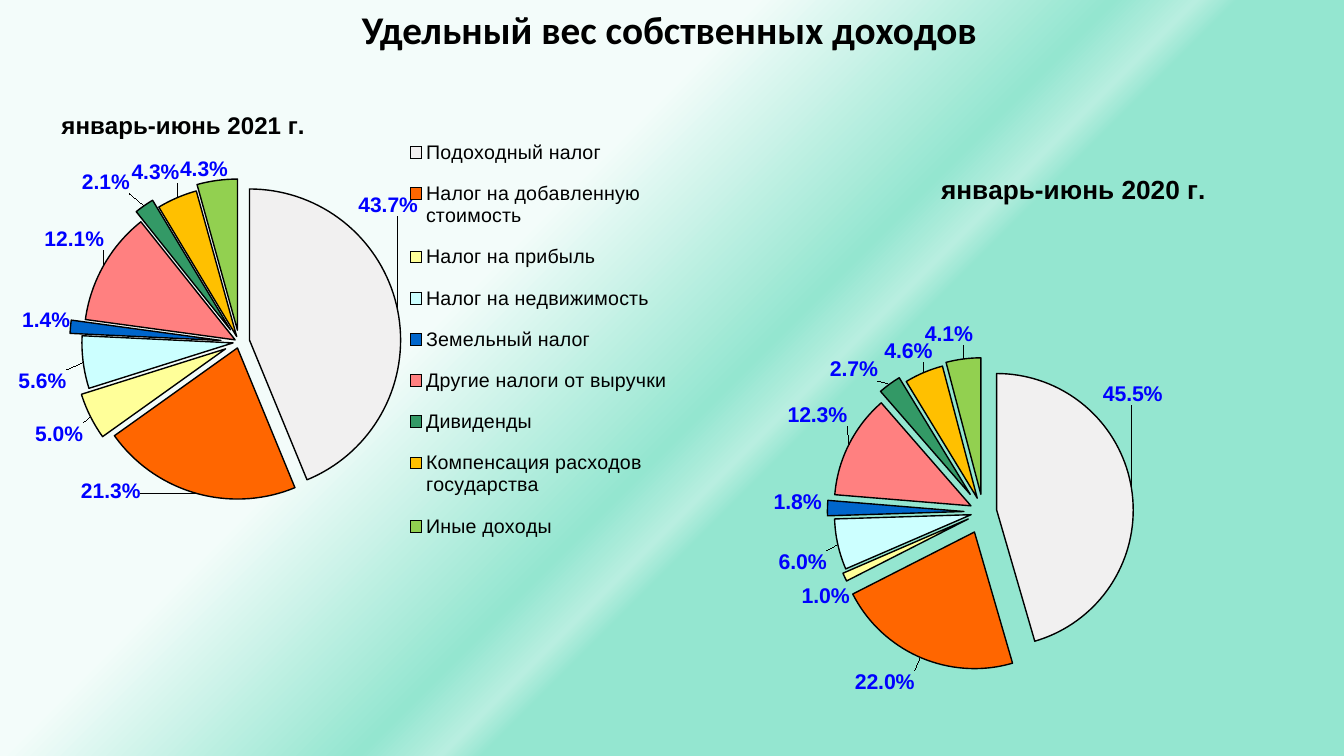
"""Builds a slide comparing the shares of own revenue in two periods."""
from copy import deepcopy

from pptx import Presentation
from pptx.chart.data import CategoryChartData
from pptx.dml.color import RGBColor
from pptx.enum.chart import XL_CHART_TYPE, XL_LABEL_POSITION, XL_LEGEND_POSITION
from pptx.enum.text import MSO_ANCHOR, PP_ALIGN
from pptx.oxml.ns import qn
from pptx.oxml.xmlchemy import OxmlElement
from pptx.util import Inches, Pt

PIE = XL_CHART_TYPE.PIE
OUTSIDE = XL_LABEL_POSITION.OUTSIDE_END
RIGHT = XL_LEGEND_POSITION.RIGHT
CENTER = PP_ALIGN.CENTER
MIDDLE = MSO_ANCHOR.MIDDLE

WIDTH, HEIGHT = Inches(13.33), Inches(7.5)
COLORS = {"text": "000000", "label": "0000FF", "pale": "F3FCFA",
          "mint": "94E6D0", "glow": "B8EEE0"}
BACKGROUND = [(36, "pale"), (53, "mint"), (57, "glow"), (59, "mint")]
TAXES = {
    "Подоходный налог": "F1F0F0",
    "Налог на добавленную стоимость": "FF6600",
    "Налог на прибыль": "FFFF99",
    "Налог на недвижимость": "CCFFFF",
    "Земельный налог": "0066CC",
    "Другие налоги от выручки": "FF8080",
    "Дивиденды": "339966",
    "Компенсация расходов государства": "FFC000",
    "Иные доходы": "92D050",
}
TITLE_BOX = (26, 0, 47.6, 7.6)
LEGEND_BOX = (57.7, 6.3, 39, 89)
PERIOD_2021 = {
    "title": "январь-июнь 2021 г.", "title_size": 17.2, "title_at": (7, 2.7),
    "box": (0.68, 12.13, 51.01, 64.53), "plot": (11.5, 11.3, 44.1, 80.1),
    "categories": list(TAXES), "label_size": 15,
    "values": [43.7, 21.3, 5, 5.6, 1.4, 12.1, 2.1, 4.3, 4.3],
    "explosions": [7, 4, 10, 4, 12, 3, 10, 4, 8],
    "shifts": [(-6.6, -19), (-7.8, -4), (-0.3, 0.8), (-1.6, 1.4), (0.8, 1.2),
               (0.8, -2.4), (-1.6, -1.4), (0.7, -1.8), (1.7, 1.2)],
}
PERIOD_2020 = {
    "title": "январь-июнь 2020 г.", "title_size": 18.7, "title_at": (23.8, 0.7),
    "box": (57.54, 21.6, 50.94, 78.4), "plot": (8.7, 20.8, 43.9, 76.1),
    "categories": [str(n + 1) for n in range(len(TAXES))], "label_size": 15.2,
    "values": [45.5, 22, 1, 6, 1.8, 12.3, 2.7, 4.6, 4.1],
    "explosions": [10, 16, 12, 9, 14, 10, 16, 11, 13],
    "shifts": [(-5.1, -14.2), (-0.5, 1.3), (1.5, 0.8), (-0.8, 0.8), (0, -1),
               (0.5, -2.5), (-1.2, 0.3), (1.6, -0.8), (1.5, -1.2)],
}


def element(tag, val=None):
    """Return a new XML element with an optional val attribute."""
    el = OxmlElement(tag)
    if val is not None:
        el.set("val", str(val))
    return el


def on_slide(x, y, w, h):
    """Turn percentages of the slide's size into lengths."""
    return [int(side * part / 100) for side, part
            in zip((WIDTH, HEIGHT, WIDTH, HEIGHT), (x, y, w, h))]


def layout(*percents, edge=True, inner=False):
    """Return a manual layout from percentages of the chart's size."""
    el, manual = element("c:layout"), element("c:manualLayout")
    el.append(manual)
    if inner:
        manual.append(element("c:layoutTarget", "inner"))
    if edge:
        manual.append(element("c:xMode", "edge"))
        manual.append(element("c:yMode", "edge"))
    for name, percent in zip("xywh", percents):
        manual.append(element(f"c:{name}", round(percent / 100, 4)))
    return el


def place(parent, new, before):
    """Put a layout into parent, ahead of the child with the tag before."""
    for old in parent.findall(qn("c:layout")):
        parent.remove(old)
    parent.find(qn(before)).addprevious(new)


def style_font(font, size, color="text", bold=False, name="Arial"):
    """Set size, colour, weight and typeface of a font."""
    font.size, font.bold, font.name = Pt(size), bold, name
    font.color.rgb = RGBColor.from_string(COLORS[color])


def write(tf, text, align=CENTER, **fmt):
    """Write text into a frame with the given font format."""
    p = tf.paragraphs[0]
    p.alignment = align
    r = p.add_run()
    r.text = text
    style_font(r.font, **fmt)


def paint_background(slide):
    """Fill the slide with a diagonal gradient."""
    fill = slide.background.fill
    fill.gradient()
    fill.gradient_angle = 315
    stops = slide.element.find(".//" + qn("a:gsLst"))
    for stop in list(stops):
        stops.remove(stop)
    for percent, color in BACKGROUND:
        stop = element("a:gs")
        stop.set("pos", str(percent * 1000))
        stop.append(element("a:srgbClr", COLORS[color]))
        stops.append(stop)


def add_title(slide, text):
    """Place the slide title along the top edge."""
    sp = slide.shapes.title
    sp.left, sp.top, sp.width, sp.height = on_slide(*TITLE_BOX)
    sp.text_frame.word_wrap = False
    sp.text_frame.vertical_anchor = MIDDLE
    write(sp.text_frame, text, size=28, bold=True, name="Calibri")


def label_slices(series, size, shifts):
    """Show the shares outside the slices, each moved by its shift."""
    labels = series.data_labels
    labels.show_value, labels.show_percentage = True, False
    labels.number_format, labels.number_format_is_linked = '0.0"%"', False
    labels.position = OUTSIDE
    style_font(labels.font, size, "label", bold=True)
    root = series._element.find(qn("c:dLbls"))
    root.find(".//" + qn("a:bodyPr")).set("wrap", "none")
    shared = [el for el in root if el.tag != qn("c:showLeaderLines")]
    for i, shift in enumerate(shifts):
        label = element("c:dLbl")
        label.append(element("c:idx", i))
        label.append(layout(*shift, edge=False))
        label.extend(deepcopy(shared))
        root.insert(i, label)


def color_slices(series, explosions):
    """Fill, outline and pull out the slices."""
    for i, color in enumerate(TAXES.values()):
        fmt = series.points[i].format
        fmt.fill.solid()
        fmt.fill.fore_color.rgb = RGBColor.from_string(color)
        fmt.line.color.rgb = RGBColor.from_string(COLORS["text"])
        fmt.line.width = Pt(1)
    for point, distance in zip(series._element.findall(qn("c:dPt")), explosions):
        point.find(qn("c:spPr")).addprevious(element("c:explosion", distance))


def add_legend(chart):
    """Add the list of taxes at the right of the pie."""
    chart.has_legend = True
    legend = chart.legend
    legend.position, legend.include_in_layout = RIGHT, False
    style_font(legend.font, 14)
    place(legend._element, layout(*LEGEND_BOX), "c:overlay")


def add_pie(slide, period, shrink=0):
    """Add the pie chart of one period and return the chart."""
    data = CategoryChartData(number_format="0.0")
    data.categories = period["categories"]
    data.add_series("Series 1", period["values"])
    chart = slide.shapes.add_chart(PIE, *on_slide(*period["box"]), data).chart
    style_font(chart.font, 12)
    chart.has_legend = False
    title = chart.chart_title
    write(title.text_frame, period["title"], size=period["title_size"], bold=True)
    title.include_in_layout = False
    place(title._element, layout(*period["title_at"]), "c:overlay")
    chart.plots[0].vary_by_categories = True
    series = chart.plots[0].series[0]
    color_slices(series, period["explosions"])
    label_slices(series, period["label_size"], period["shifts"])
    if shrink:
        series._element.find(qn("c:dPt")).addprevious(element("c:explosion", shrink))
    area = chart.element.find(".//" + qn("c:plotArea"))
    place(area, layout(*period["plot"], inner=True), "c:pieChart")
    return chart


def main():
    """Build and save the slide."""
    prs = Presentation()
    prs.slide_width, prs.slide_height = WIDTH, HEIGHT
    slide = prs.slides.add_slide(prs.slide_layouts[5])
    paint_background(slide)
    add_title(slide, "Удельный вес собственных доходов")
    add_legend(add_pie(slide, PERIOD_2021))
    add_pie(slide, PERIOD_2020, shrink=10)
    prs.save("out.pptx")


if __name__ == "__main__":
    main()
